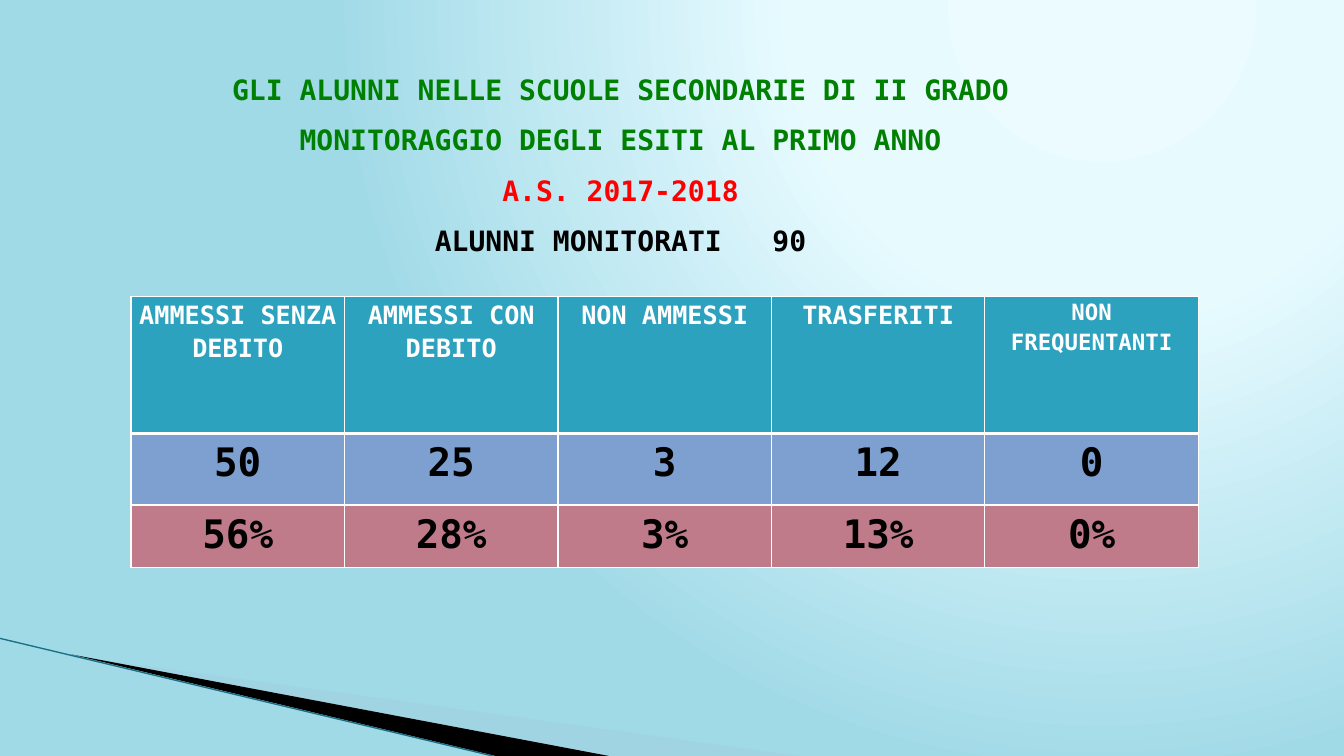
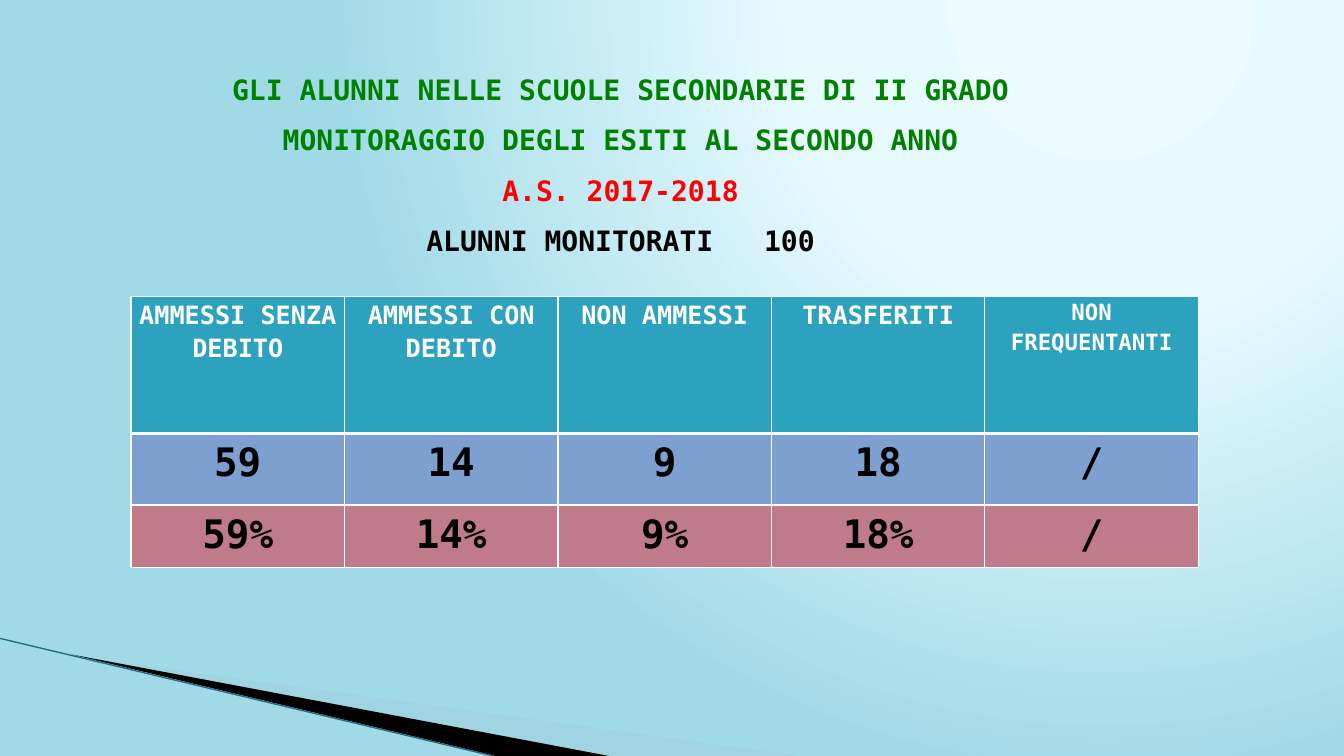
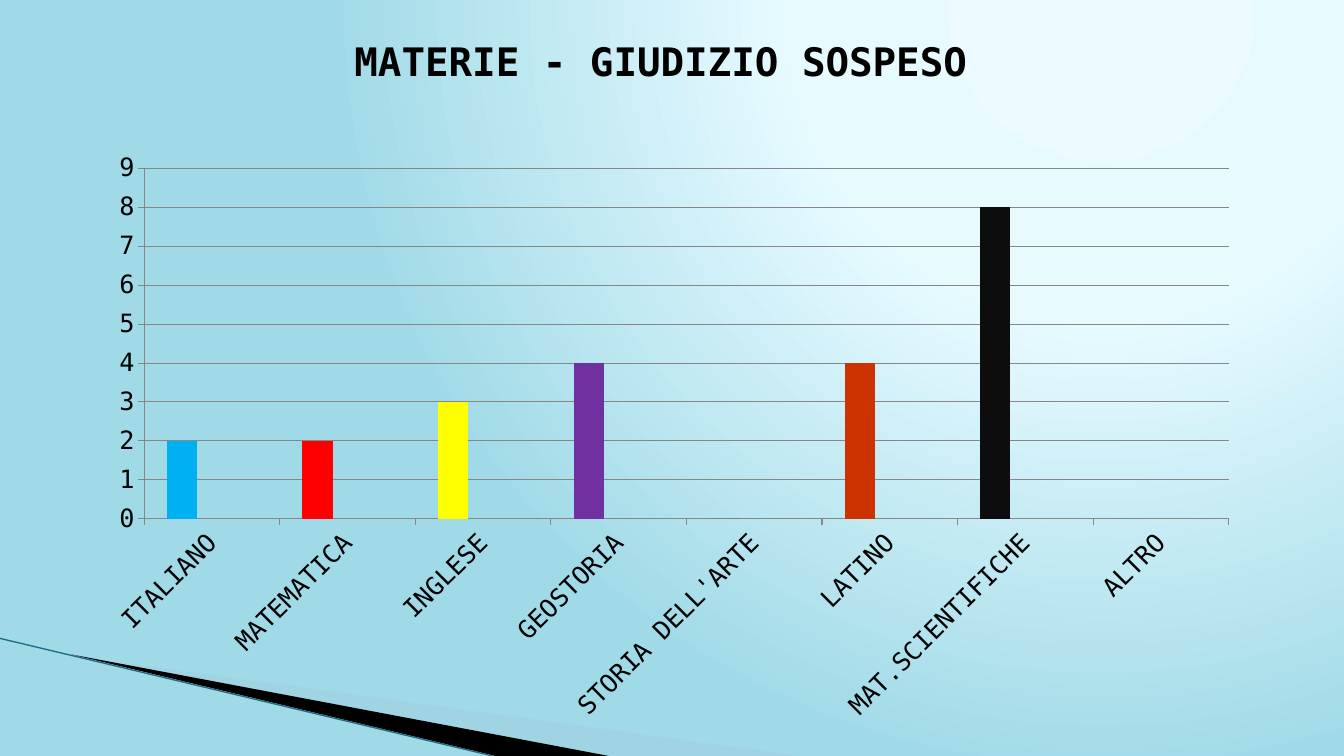
import pptx
import pptx.chart.data
import pptx.dml.color
import pptx.enum.chart
import pptx.enum.shapes
import pptx.enum.text
import pptx.oxml
import pptx.oxml.ns
import pptx.util

Pt = pptx.util.Pt
RGBColor = pptx.dml.color.RGBColor
qn = pptx.oxml.ns.qn

FONT = "DejaVu Sans Mono"
BLACK = RGBColor(0x00, 0x00, 0x00)
WHITE = RGBColor(0xFF, 0xFF, 0xFF)
GREEN = RGBColor(0x00, 0x80, 0x00)
RED = RGBColor(0xFF, 0x00, 0x00)
GLOW = RGBColor(0xEB, 0xFB, 0xFF)
PALE = RGBColor(0xE7, 0xFB, 0xFF)
SKY = RGBColor(0xA1, 0xDA, 0xE7)
MIST = RGBColor(0xA0, 0xCB, 0xDC)
DEEP_TEAL = RGBColor(0x1C, 0x6E, 0x85)
HEADER_TEAL = RGBColor(0x2D, 0xA2, 0xBF)
COUNT_BLUE = RGBColor(0x7D, 0xA0, 0xD0)
PERCENT_ROSE = RGBColor(0xC0, 0x7B, 0x8A)
GRID_GREY = RGBColor(0x87, 0x87, 0x87)
SERIES_COLOURS = (
    HEADER_TEAL,
    RGBColor(0xDA, 0x1F, 0x28),
    RGBColor(0xEB, 0x64, 0x1B),
)
SUBJECTS = (
    ("ITALIANO", 2, RGBColor(0x00, 0xB0, 0xF0)),
    ("MATEMATICA", 2, RED),
    ("INGLESE", 3, RGBColor(0xFF, 0xFF, 0x00)),
    ("GEOSTORIA", 4, RGBColor(0x70, 0x30, 0xA0)),
    ("STORIA DELL'ARTE", 0, RGBColor(0x00, 0xA2, 0x00)),
    ("LATINO", 4, RGBColor(0xCC, 0x33, 0x00)),
    ("MAT.SCIENTIFICHE", 8, RGBColor(0x0D, 0x0D, 0x0D)),
    ("ALTRO", 0, HEADER_TEAL),
)

HEADING_BOX = (134, 36, 618.5, 152.6)
TABLE_BOX = (93.6, 211.7, 762.5, 193.6)
CHART_TITLE_BOX = (58, 26.6, 828, 104.4)
CHART_BOX = (66.2, 101.5, 828, 422)
ROW_HEIGHTS = (97.9, 51.1, 44.6)
HEADERS = (
    "AMMESSI SENZA DEBITO",
    "AMMESSI CON DEBITO",
    "NON AMMESSI",
    "TRASFERITI",
    "NON FREQUENTANTI",
)
NAMESPACES = pptx.oxml.ns.nsdecls("a", "c")


def to_points(box):
    return [Pt(length) for length in box]


def style_para(para, size, colour, spacing, bold=True):
    para.alignment = pptx.enum.text.PP_ALIGN.CENTER
    para.line_spacing = spacing
    para.font.name = FONT
    para.font.size = Pt(size)
    para.font.bold = bold
    para.font.color.rgb = colour


def paint_background(master):
    master.background.fill.gradient()
    stops = "".join(
        f'<a:gs pos="{place}"><a:srgbClr val="{colour}"/></a:gs>'
        for place, colour in ((0, GLOW), (40000, PALE), (100000, SKY))
    )
    gradient = pptx.oxml.parse_xml(
        f'<a:gradFill {NAMESPACES} rotWithShape="1"><a:gsLst>{stops}</a:gsLst>'
        '<a:path path="circle"><a:fillToRect l="65000" b="98000"/></a:path></a:gradFill>'
    )
    linear = next(master.element.iter(qn("a:gradFill")))
    linear.getparent().replace(linear, gradient)


def add_wedge(page, vertices, colour):
    start, *others = [to_points(vertex) for vertex in vertices]
    builder = page.shapes.build_freeform(*start, scale=1.0)
    builder.add_line_segments(others, close=True)
    wedge = builder.convert_to_shape()
    wedge.shadow.inherit = False
    wedge.fill.solid()
    wedge.fill.fore_color.rgb = colour
    wedge.line.fill.background()
    return wedge


def add_corner(page, master):
    mist = add_wedge(page, ((52.5, 468.5), (571, 540), (438, 540)), MIST)
    tint = next(mist.element.spPr.iter(qn("a:srgbClr")))
    tint.append(pptx.oxml.parse_xml(f'<a:alpha {NAMESPACES} val="40000"/>'))
    dark = add_wedge(page, ((51, 467.5), (435, 540), (354, 540)), BLACK)
    edge = page.shapes.add_connector(
        pptx.enum.shapes.MSO_CONNECTOR.STRAIGHT, *to_points((0, 456, 352, 540))
    )
    edge.line.color.rgb = DEEP_TEAL
    edge.line.width = Pt(0.95)
    edge.element.spPr.append(pptx.oxml.parse_xml(f"<a:effectLst {NAMESPACES}/>"))
    tree = master.element.cSld.spTree
    for order, shape in enumerate((mist, dark, edge)):
        next(shape.element.iter(qn("p:cNvPr"))).set("id", str(100 + order))
        tree.insert(2 + order, shape.element)


def place_title(page, box):
    title = page.shapes.title
    title.left, title.top, title.width, title.height = to_points(box)
    frame = title.text_frame
    frame.word_wrap = True
    frame.auto_size = pptx.enum.text.MSO_AUTO_SIZE.NONE
    frame.vertical_anchor = pptx.enum.text.MSO_ANCHOR.TOP
    return frame


def add_heading(page, box, year, total):
    frame = place_title(page, box)
    lines = (
        (("GLI ALUNNI NELLE SCUOLE SECONDARIE DI II GRADO",), GREEN),
        ((f"MONITORAGGIO DEGLI ESITI AL {year} ANNO",), GREEN),
        (("A.S. 2017-2018",), RED),
        (("ALUNNI MONITORATI", " ", str(total)), BLACK),
    )
    for order, (texts, colour) in enumerate(lines):
        para = frame.add_paragraph() if order else frame.paragraphs[0]
        for text in texts:
            span = para.add_run()
            span.text = text
            if text == " ":
                span.font.element.set("spc", "2400") if hasattr(span.font, "element") else (
                    span._r.get_or_add_rPr().set("spc", "2400")
                )
        style_para(para, 20, colour, 1.5)


def add_borders(cell, bottom_width):
    properties = cell._tc.get_or_add_tcPr()
    for side, width in (("L", 1), ("R", 1), ("T", 1), ("B", bottom_width)):
        properties.append(pptx.oxml.parse_xml(
            f'<a:ln{side} {NAMESPACES} w="{Pt(width)}"><a:solidFill>'
            f'<a:srgbClr val="{WHITE}"/></a:solidFill></a:ln{side}>'
        ))


def add_results_table(page, box, counts, percents):
    rows = (
        (HEADERS, HEADER_TEAL, WHITE, 18),
        (counts, COUNT_BLUE, BLACK, 28),
        (percents, PERCENT_ROSE, BLACK, 28),
    )
    table = page.shapes.add_table(len(rows), len(HEADERS), *to_points(box)).table
    table.horz_banding = False
    for column in table.columns:
        column.width = Pt(box[2] / len(HEADERS))
    for row_index, (texts, fill, colour, size) in enumerate(rows):
        table.rows[row_index].height = Pt(ROW_HEIGHTS[row_index])
        for column_index, text in enumerate(texts):
            cell = table.cell(row_index, column_index)
            cell.margin_left = cell.margin_right = Pt(5)
            cell.margin_top = cell.margin_bottom = 0
            add_borders(cell, 3 if row_index == 0 else 1)
            cell.fill.solid()
            cell.fill.fore_color.rgb = fill
            cell.text = text
            cell_size = 16 if text == HEADERS[-1] else size
            style_para(cell.text_frame.paragraphs[0], cell_size, colour, 1.15)


def add_subject_chart(page, box):
    names, values, colours = zip(*SUBJECTS)
    data = pptx.chart.data.CategoryChartData()
    data.categories = names
    data.add_series("Series 1", values)
    for name in ("Series 2", "Series 3"):
        data.add_series(name, [None] * len(names))
    chart = page.shapes.add_chart(
        pptx.enum.chart.XL_CHART_TYPE.COLUMN_CLUSTERED, *to_points(box), data
    ).chart
    chart.has_title = False
    chart.has_legend = False
    chart.font.name = FONT
    chart.font.size = Pt(18)
    chart.font.color.rgb = BLACK
    plot = chart.plots[0]
    plot.vary_by_categories = False
    plot.gap_width = 150
    plot.overlap = 0
    for series, colour in zip(plot.series, SERIES_COLOURS):
        series.format.fill.solid()
        series.format.fill.fore_color.rgb = colour
    for order, colour in enumerate(colours):
        fill = plot.series[0].points[order].format.fill
        fill.solid()
        fill.fore_color.rgb = colour
    for axis in (chart.category_axis, chart.value_axis):
        axis.major_tick_mark = pptx.enum.chart.XL_TICK_MARK.OUTSIDE
        axis.minor_tick_mark = pptx.enum.chart.XL_TICK_MARK.NONE
        axis.format.line.color.rgb = GRID_GREY
    chart.value_axis.has_major_gridlines = True
    chart.value_axis.major_gridlines.format.line.color.rgb = GRID_GREY
    labels = chart.category_axis.tick_labels
    labels.font.size = Pt(18)
    labels.font.name = FONT
    labels.font.color.rgb = BLACK
    turned = next(next(chart.element.iter(qn("c:catAx"))).iter(qn("a:bodyPr")))
    turned.set("rot", "-2700000")
    clear = f"<c:spPr {NAMESPACES}><a:noFill/><a:ln><a:noFill/></a:ln></c:spPr>"
    chart.element.find(qn("c:chart")).addnext(pptx.oxml.parse_xml(clear))
    next(chart.element.iter(qn("c:plotArea"))).append(pptx.oxml.parse_xml(clear))


def fill_results_page(page, year, total, counts, percents):
    add_results_table(page, TABLE_BOX, counts, percents)
    add_heading(page, HEADING_BOX, year, total)


def fill_subjects_page(page):
    para = place_title(page, CHART_TITLE_BOX).paragraphs[0]
    para.text = "MATERIE - GIUDIZIO SOSPESO"
    style_para(para, 28, BLACK, 0.9)
    add_subject_chart(page, CHART_BOX)


def main():
    deck = pptx.Presentation()
    deck.slide_width, deck.slide_height = Pt(960), Pt(540)
    title_only = deck.slide_layouts[5]
    first, second, third = [deck.slides.add_slide(title_only) for _ in range(3)]
    paint_background(deck.slide_master)
    add_corner(first, deck.slide_master)
    fill_results_page(
        first, "PRIMO", 90,
        ("50", "25", "3", "12", "0"),
        ("56%", "28%", "3%", "13%", "0%"),
    )
    fill_results_page(
        second, "SECONDO", 100,
        ("59", "14", "9", "18", "/"),
        ("59%", "14%", "9%", "18%", "/"),
    )
    fill_subjects_page(third)
    deck.save("out.pptx")


if __name__ == "__main__":
    main()
